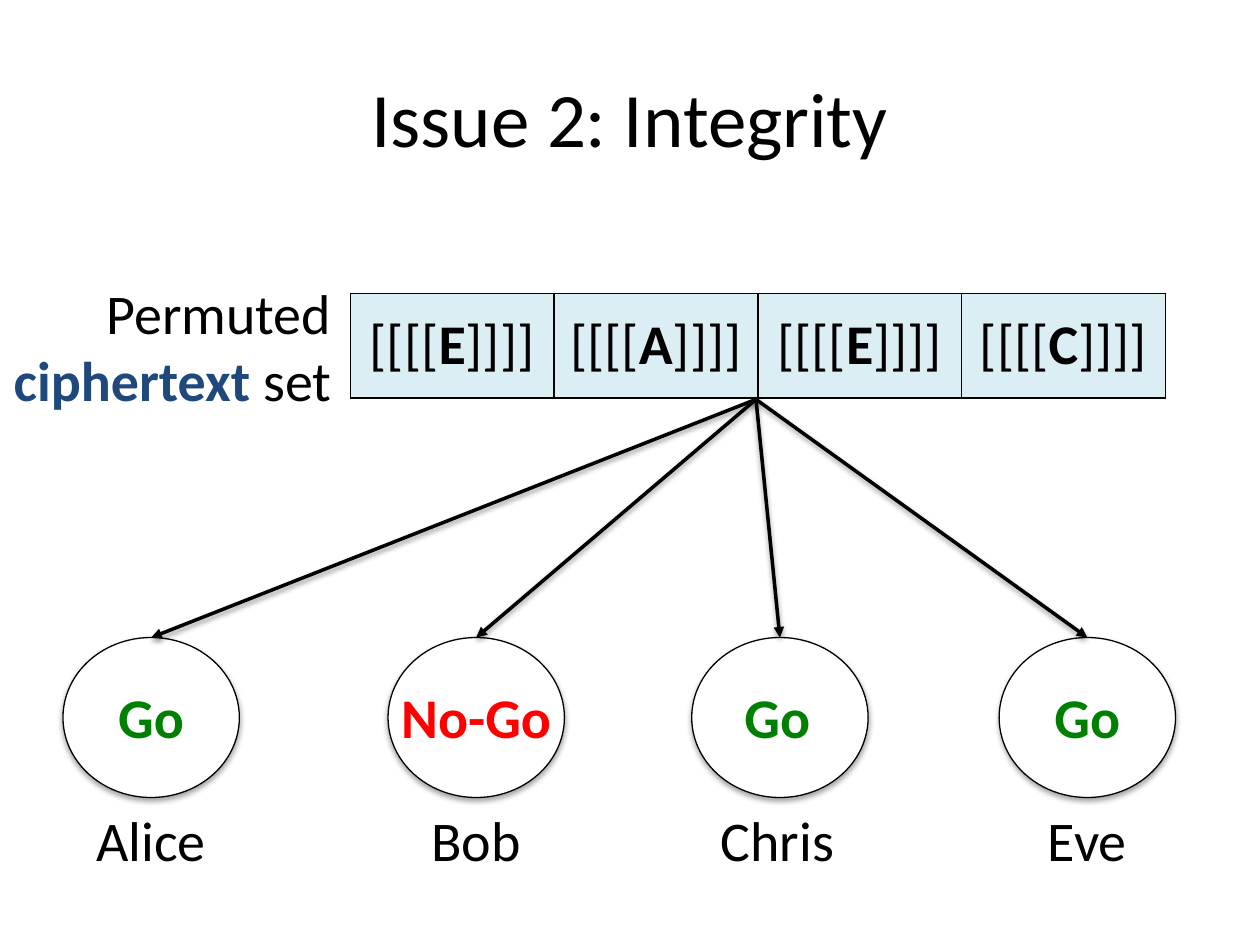
from dataclasses import dataclass

from lxml.etree import SubElement
from pptx import Presentation
from pptx.dml.color import RGBColor
from pptx.enum.shapes import MSO_CONNECTOR as Connector, MSO_SHAPE as Shape
from pptx.enum.text import MSO_ANCHOR as Anchor, PP_ALIGN as Align
from pptx.oxml import parse_xml
from pptx.oxml.ns import nsdecls, qn
from pptx.util import Inches, Pt

BLACK = RGBColor(0x00, 0x00, 0x00)
WHITE = RGBColor(0xFF, 0xFF, 0xFF)
GREEN = RGBColor(0x00, 0x80, 0x00)
RED = RGBColor(0xFF, 0x00, 0x00)
NAVY = RGBColor(0x1F, 0x49, 0x7D)
PALE_BLUE = RGBColor(0xDB, 0xEE, 0xF4)

FONT = "Calibri"
MEMBER_WIDTH = 1.4
MEMBER_TOP = 5.06
ARROW_START = (6, 3.17)


@dataclass(frozen=True)
class Member:
    name: str
    vote: str
    color: RGBColor
    left: float
    text_left: float


MEMBERS = (
    Member("Alice", "Go", GREEN, 0.5, 0.5),
    Member("Bob", "No-Go", RED, 3.08, 3.08),
    Member("Chris", "Go", GREEN, 5.49, 5.47),
    Member("Eve", "Go", GREEN, 7.93, 7.93),
)
CIPHERTEXTS = ("E", "A", "E", "C")


def add_run(paragraph, text: str, color: RGBColor = BLACK,
            bold: bool = False, size: int = 32) -> None:
    run = paragraph.add_run()
    run.text = text
    run.font.name = FONT
    run.font.size = Pt(size)
    run.font.bold = bold
    run.font.color.rgb = color


def add_label(slide, left: float, top: float, width: float, height: float,
              align: Align, side_margin: float = 0.1):
    frame = slide.shapes.add_textbox(
        Inches(left), Inches(top), Inches(width), Inches(height)).text_frame
    frame.word_wrap = True
    frame.margin_left = frame.margin_right = Inches(side_margin)
    paragraph = frame.paragraphs[0]
    paragraph.alignment = align
    return paragraph


def add_shadow(shape, distance: float, opacity: int) -> None:
    shape.element.spPr.append(parse_xml(
        f'<a:effectLst {nsdecls("a")}>'
        f'<a:outerShdw blurRad="{Pt(3.1)}" dist="{Pt(distance)}" dir="5400000" rotWithShape="0">'
        f'<a:srgbClr val="{BLACK}"><a:alpha val="{opacity * 1000}"/></a:srgbClr>'
        '</a:outerShdw></a:effectLst>'))


def add_circle(slide, member: Member) -> None:
    circle = slide.shapes.add_shape(
        Shape.OVAL, Inches(member.left), Inches(MEMBER_TOP),
        Inches(MEMBER_WIDTH), Inches(1.27))
    circle.fill.solid()
    circle.fill.fore_color.rgb = WHITE
    circle.line.color.rgb = BLACK
    circle.line.width = Pt(0.75)
    add_shadow(circle, 1.8, 35)


def add_arrow(slide, member: Member) -> None:
    start_x, start_y = ARROW_START
    arrow = slide.shapes.add_connector(
        Connector.STRAIGHT, Inches(start_x), Inches(start_y),
        Inches(member.left + MEMBER_WIDTH / 2), Inches(MEMBER_TOP))
    arrow.line.color.rgb = BLACK
    arrow.line.width = Pt(2)
    SubElement(arrow.line._get_or_add_ln(), qn("a:tailEnd"), type="triangle")
    add_shadow(arrow, 1.6, 38)


def add_member_text(slide, member: Member) -> None:
    name = add_label(slide, member.text_left, 6.34, MEMBER_WIDTH, 0.64, Align.CENTER)
    add_run(name, member.name)
    vote = add_label(slide, member.text_left, 5.37, MEMBER_WIDTH, 0.64, Align.CENTER, 0)
    add_run(vote, member.vote, member.color, bold=True)


def add_borders(cell) -> None:
    properties = cell._tc.get_or_add_tcPr()
    for index, side in enumerate(("lnL", "lnR", "lnT", "lnB")):
        properties.insert(index, parse_xml(
            f'<a:{side} {nsdecls("a")} w="{Pt(1)}"><a:solidFill>'
            f'<a:srgbClr val="{BLACK}"/></a:solidFill></a:{side}>'))


def add_ciphertext_table(slide) -> None:
    table = slide.shapes.add_table(
        1, len(CIPHERTEXTS), Inches(2.78), Inches(2.33),
        Inches(6.47), Inches(0.83)).table
    table.first_row = False
    table.horz_banding = False
    for cell, letter in zip(table.rows[0].cells, CIPHERTEXTS):
        cell.fill.solid()
        cell.fill.fore_color.rgb = PALE_BLUE
        cell.vertical_anchor = Anchor.MIDDLE
        paragraph = cell.text_frame.paragraphs[0]
        paragraph.alignment = Align.CENTER
        add_run(paragraph, "[[[[")
        add_run(paragraph, letter, bold=True)
        add_run(paragraph, "]]]]")
        add_borders(cell)


def add_title(slide) -> None:
    title = slide.shapes.title
    title.left, title.top = Inches(0.5), Inches(0.3)
    title.width, title.height = Inches(9), Inches(1.25)
    title.text_frame.vertical_anchor = Anchor.MIDDLE
    heading = title.text_frame.paragraphs[0]
    heading.alignment = Align.CENTER
    add_run(heading, "Issue 2: Integrity", size=44)


def add_set_caption(slide) -> None:
    caption = add_label(slide, 0, 2.16, 2.73, 1.18, Align.RIGHT)
    add_run(caption, "Permuted")
    caption.add_line_break()
    add_run(caption, "ciphertext ", NAVY, bold=True)
    add_run(caption, "set")


def main() -> None:
    deck = Presentation()
    deck.slide_width, deck.slide_height = Inches(10), Inches(7.5)
    slide = deck.slides.add_slide(deck.slide_layouts[5])
    add_title(slide)
    for member in MEMBERS:
        add_circle(slide, member)
    add_set_caption(slide)
    for member in MEMBERS:
        add_arrow(slide, member)
        add_member_text(slide, member)
    add_ciphertext_table(slide)
    deck.save("out.pptx")


if __name__ == "__main__":
    main()
